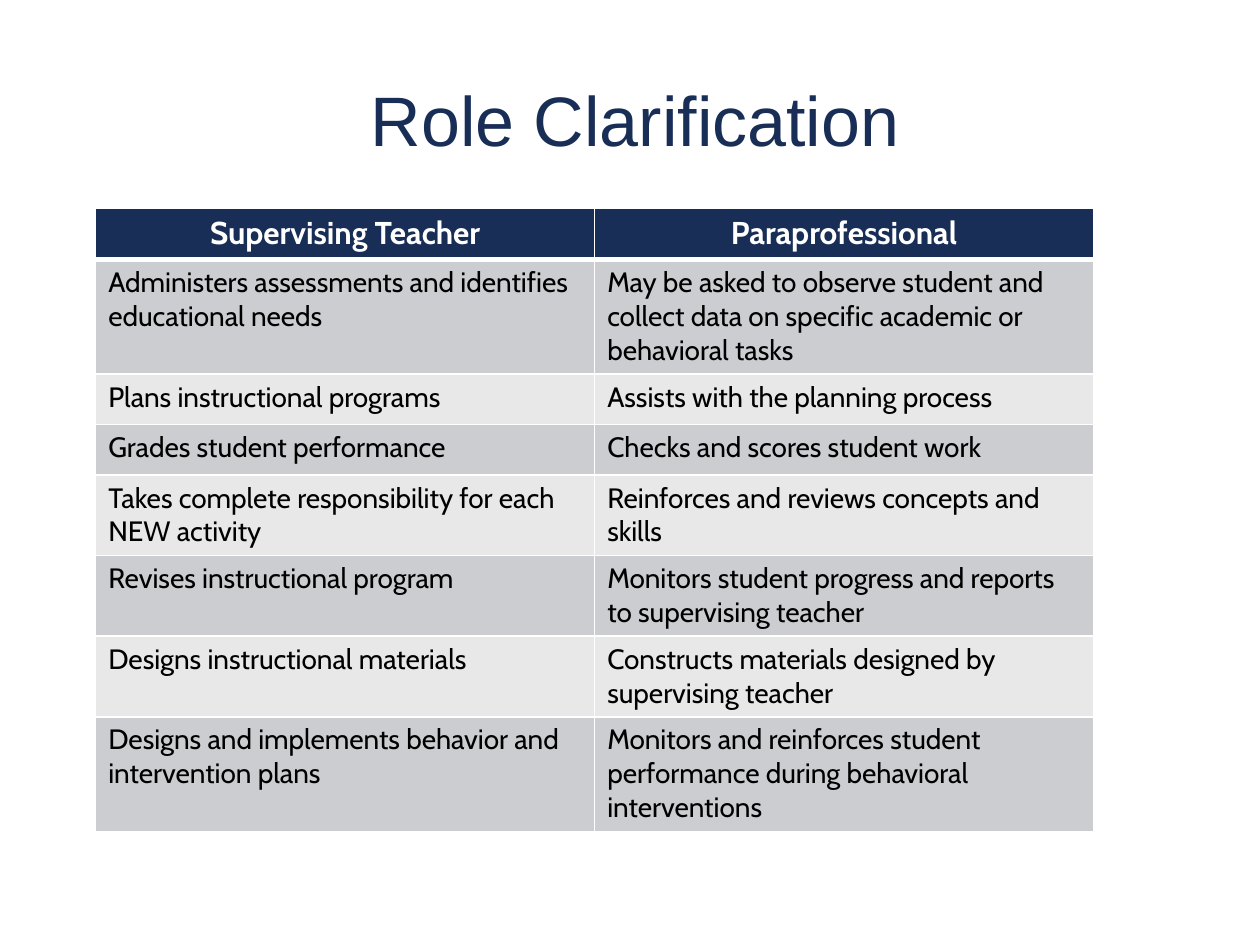
from lxml.etree import SubElement
from pptx import Presentation
from pptx.dml.color import RGBColor
from pptx.enum.text import MSO_ANCHOR, PP_ALIGN
from pptx.oxml.ns import qn
from pptx.util import Inches, Pt

# Content
TITLE = "Role Clarification"
ROLES = ("Supervising Teacher", "Paraprofessional")
DUTIES = [
    ("Administers assessments and identifies educational needs",
     "May be asked to observe student and collect data on specific academic or behavioral tasks"),
    ("Plans instructional programs", "Assists with the planning process"),
    ("Grades student performance", "Checks and scores student work"),
    ("Takes complete responsibility for each NEW activity",
     "Reinforces and reviews concepts and skills"),
    ("Revises instructional program",
     "Monitors student progress and reports to supervising teacher"),
    ("Designs instructional materials",
     "Constructs materials designed by supervising teacher"),
    ("Designs and implements behavior and intervention plans",
     "Monitors and reinforces student performance during behavioral interventions"),
]
DUTY_LINES = (3, 1, 1, 2, 2, 2, 3)

# Style
COLORS = {"navy": "192E56", "dark_band": "CCCDD1", "light_band": "E8E8E9",
          "white": "FFFFFF", "black": "000000"}
HEADER_HEIGHT = 0.41
HEIGHT_BY_LINES = {1: 0.4, 2: 0.64, 3: 0.91}
TABLE_LEFT, TABLE_TOP, COLUMN_WIDTH = 0.76, 1.65, 3.96


def color(name):
    return RGBColor.from_string(COLORS[name])


def style_text(paragraph, font_name, size, color_name, align, bold=False):
    paragraph.alignment = align
    font = paragraph.font
    font.name, font.size, font.bold = font_name, Pt(size), bold
    font.color.rgb = color(color_name)


def set_borders(cell, bottom_width):
    properties = cell._tc.get_or_add_tcPr()
    widths = {"a:lnL": 1, "a:lnR": 1, "a:lnT": 1, "a:lnB": bottom_width}
    for tag, width in widths.items():
        border = SubElement(properties, qn(tag), w=str(Pt(width)))
        fill = SubElement(border, qn("a:solidFill"))
        SubElement(fill, qn("a:srgbClr"), val=COLORS["white"])


def fill_cell(cell, text, fill_name, bottom_width=1, **text_style):
    cell.text = text
    style_text(cell.text_frame.paragraphs[0], "Cabin", **text_style)
    set_borders(cell, bottom_width)  # borders come before the fill in the schema
    cell.fill.solid()
    cell.fill.fore_color.rgb = color(fill_name)


def add_title(slide):
    title = slide.shapes.title
    title.left, title.top = Inches(0.69), Inches(0.63)
    title.width, title.height = Inches(8.7), Inches(1.24)
    title.text_frame.text = TITLE
    title.text_frame.vertical_anchor = MSO_ANCHOR.TOP
    heading = title.text_frame.paragraphs[0]
    heading.line_spacing = 0.9
    style_text(heading, "Arial", 40, "navy", PP_ALIGN.CENTER)


def add_roles_table(slide):
    heights = [HEADER_HEIGHT] + [HEIGHT_BY_LINES[n] for n in DUTY_LINES]
    roles = slide.shapes.add_table(
        len(heights), len(ROLES), Inches(TABLE_LEFT), Inches(TABLE_TOP),
        Inches(COLUMN_WIDTH * len(ROLES)), Inches(sum(heights))).table
    for row, height in zip(roles.rows, heights):
        row.height = Inches(height)

    # Header row
    for column, role in enumerate(ROLES):
        fill_cell(roles.cell(0, column), role, "navy", bottom_width=3, size=18,
                  color_name="white", align=PP_ALIGN.CENTER, bold=True)

    # Banded duty rows
    for row, duties in enumerate(DUTIES, start=1):
        band = "dark_band" if row % 2 else "light_band"
        for column, duty in enumerate(duties):
            fill_cell(roles.cell(row, column), duty, band, size=16,
                      color_name="black", align=PP_ALIGN.LEFT)


def main():
    deck = Presentation()
    deck.slide_width, deck.slide_height = Inches(10), Inches(7.5)
    slide = deck.slides.add_slide(deck.slide_layouts.get_by_name("Title Only"))
    add_title(slide)
    add_roles_table(slide)
    deck.save("out.pptx")


if __name__ == "__main__":
    main()
